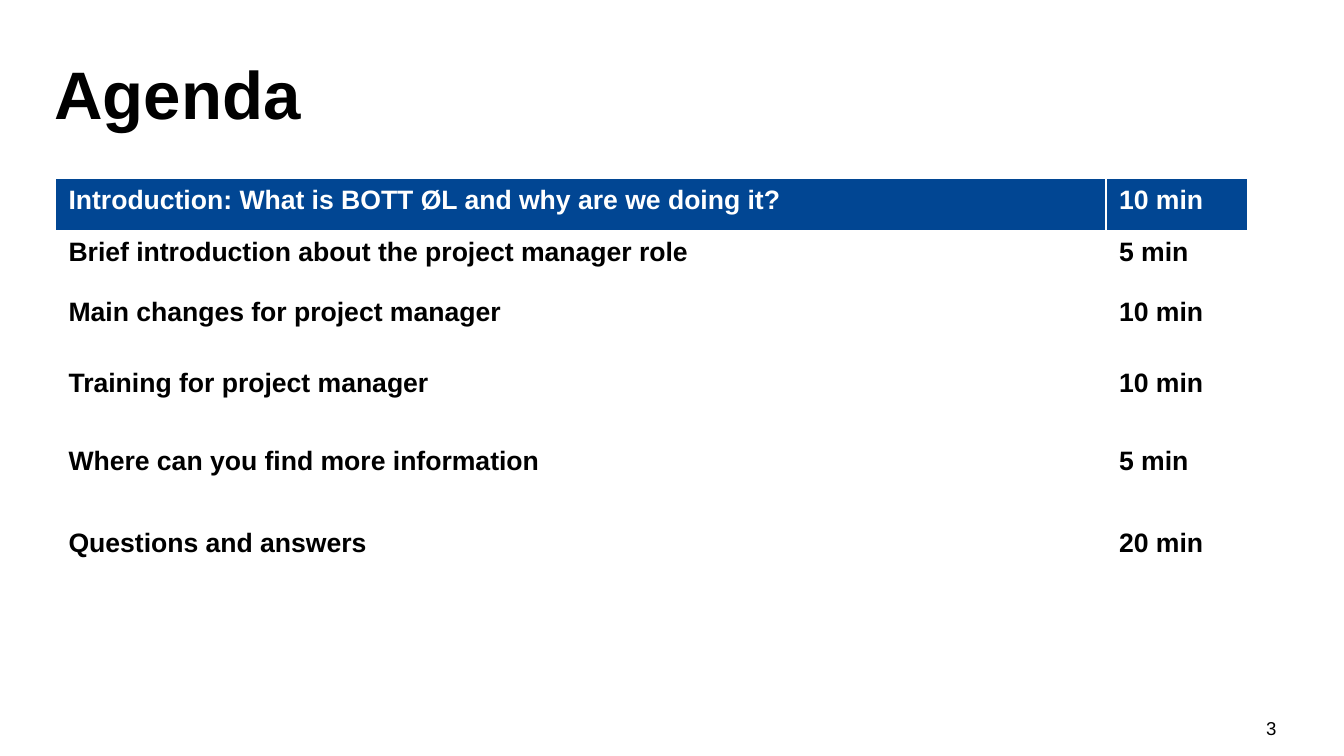
from pptx import Presentation
from pptx.dml.color import RGBColor
from pptx.enum.text import MSO_ANCHOR, PP_ALIGN
from pptx.util import Inches, Pt

MIDDLE = MSO_ANCHOR.MIDDLE
LEFT, CENTER = PP_ALIGN.LEFT, PP_ALIGN.CENTER
BLUE, WHITE, BLACK = "014693", "FFFFFF", "000000"

AGENDA = [
    # topic, duration, row height
    ("Introduction: What is BOTT ØL and why are we doing it?", "10 min", 0.52),
    ("Brief introduction about the project manager role", "5 min", 0.59),
    ("Main changes for project manager", "10 min", 0.71),
    ("Training for project manager", "10 min", 0.77),
    ("Where can you find more information", "5 min", 0.81),
    ("Questions and answers", "20 min", 0.73),
]
COLUMN_WIDTHS = [10.42, 1.4]


def style(para, size, color, bold):
    font = para.font
    font.name, font.size, font.bold = "Arial", Pt(size), bold
    font.color.rgb = RGBColor.from_string(color)


def add_text(page, area, text, size, bold, align):
    box = page.shapes.add_textbox(*(Inches(length) for length in area))
    frame = box.text_frame
    frame.word_wrap = True
    frame.vertical_anchor = MIDDLE
    para = frame.paragraphs[0]
    para.text = text
    para.alignment = align
    style(para, size, BLACK, bold)


deck = Presentation()
deck.slide_width, deck.slide_height = Inches(13.33), Inches(7.5)
page = deck.slides.add_slide(deck.slide_layouts[6])

add_text(page, (0.44, 0.44, 12.28, 0.95), "Agenda", 48, True, LEFT)
add_text(page, (12.36, 7.02, 0.5, 0.4), "3", 13.3, False, CENTER)

table_height = sum(height for _, _, height in AGENDA)
table = page.shapes.add_table(
    len(AGENDA), len(COLUMN_WIDTHS), Inches(0.55), Inches(1.77),
    Inches(sum(COLUMN_WIDTHS)), Inches(table_height)).table
table.horz_banding = False
for column, width in zip(table.columns, COLUMN_WIDTHS):
    column.width = Inches(width)

for index, (topic, duration, height) in enumerate(AGENDA):
    row = table.rows[index]
    row.height = Inches(height)
    current = index == 0
    for cell, text in zip(row.cells, (topic, duration)):
        cell.margin_left = cell.margin_right = Inches(0.13)
        cell.margin_top = cell.margin_bottom = Inches(0.07)
        cell.fill.solid()
        cell.fill.fore_color.rgb = RGBColor.from_string(BLUE if current else WHITE)
        cell.text = text
        style(cell.text_frame.paragraphs[0], 19, WHITE if current else BLACK, True)

deck.save("out.pptx")
